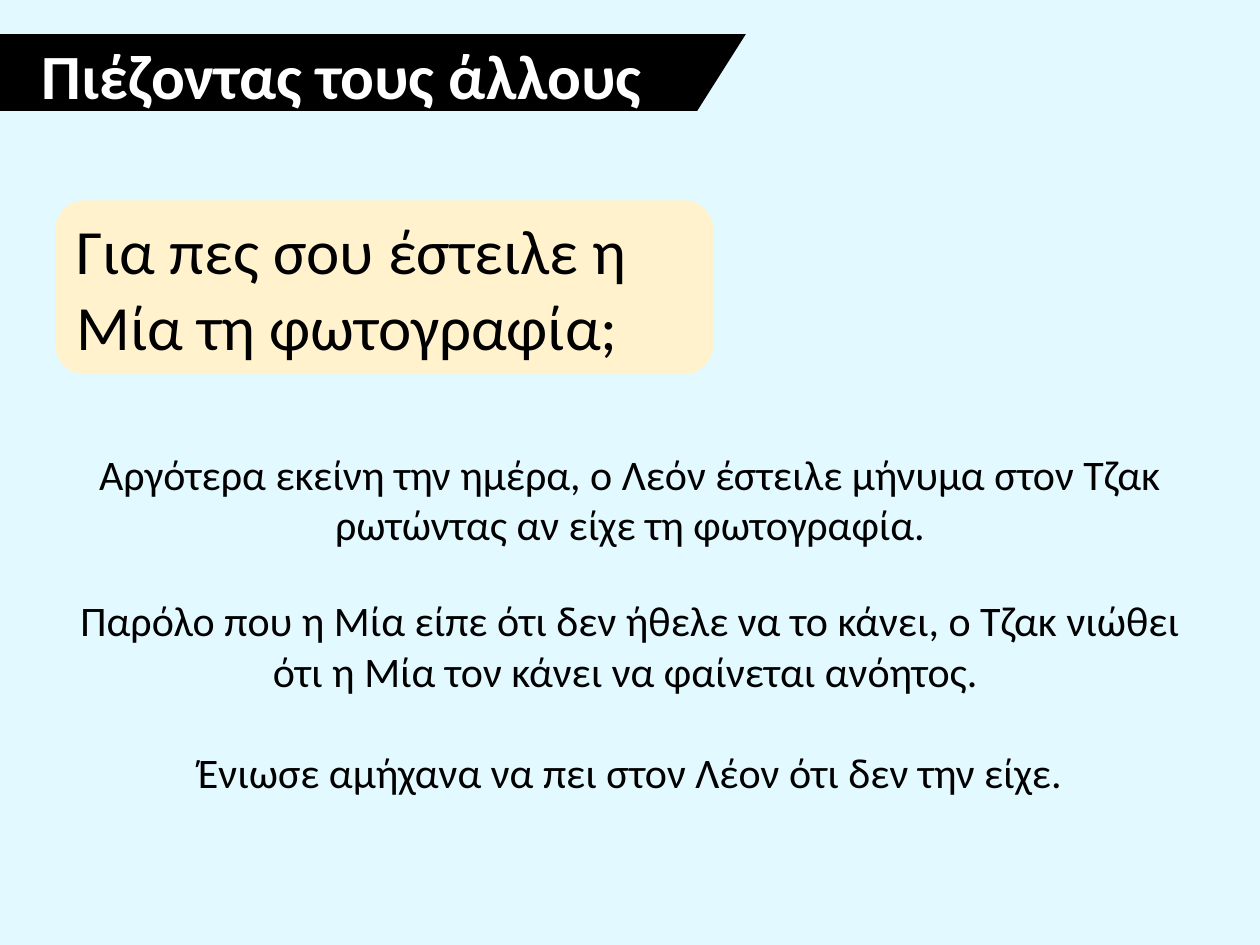
from dataclasses import dataclass

from pptx import Presentation
from pptx.dml.color import RGBColor
from pptx.enum.shapes import MSO_SHAPE as Preset
from pptx.enum.text import MSO_ANCHOR as Anchor, MSO_AUTO_SIZE as AutoSize, PP_ALIGN as Align
from pptx.slide import Slide
from pptx.util import Inches, Pt

COLORS = {"sky": "E2F9FF", "ink": "000000", "cream": "FFF2CC", "white": "FFFFFF"}


@dataclass
class StorySlide:
    """Holds the style and the slide being built."""

    slide: Slide
    font: str = "Calibri"

    def color(self, name):
        return RGBColor.from_string(COLORS[name])

    def background(self, color):
        fill = self.slide.background.fill
        fill.solid()
        fill.fore_color.rgb = self.color(color)

    def set_text(self, holder, lines, size, color="ink", align=Align.LEFT,
                 anchor=Anchor.TOP, bold=False, gap=0, spacing=None):
        frame = holder.text_frame
        frame.text = "\n".join(lines)
        frame.word_wrap = True
        frame.auto_size = AutoSize.NONE
        frame.vertical_anchor = anchor
        for index, paragraph in enumerate(frame.paragraphs):
            paragraph.alignment = align
            paragraph.space_before = Pt(gap if index else 0)
            if spacing:
                paragraph.line_spacing = spacing
            for run in paragraph.runs:
                run.font.name = self.font
                run.font.size = Pt(size)
                run.font.bold = bold
                run.font.color.rgb = self.color(color)

    def panel(self, preset, box, color):
        panel = self.slide.shapes.add_shape(preset, *map(Inches, box))
        panel.shadow.inherit = False
        panel.fill.solid()
        panel.fill.fore_color.rgb = self.color(color)
        panel.line.fill.background()
        return panel

    def question(self, text, box):
        bubble = self.panel(Preset.ROUNDED_RECTANGLE, box, "cream")
        self.set_text(bubble, [text], 36, anchor=Anchor.MIDDLE)

    def story(self, lines, box):
        story = self.slide.shapes.add_textbox(*map(Inches, box))
        self.set_text(story, lines, 24, align=Align.CENTER, gap=29)

    def title(self, text, box):
        title = self.slide.shapes.title
        title.left, title.top, title.width, title.height = map(Inches, box)
        self.set_text(title, [text], 36, "white", bold=True, spacing=1.07)
        title.element.getparent().append(title.element)


def main():
    deck = Presentation()
    deck.slide_width, deck.slide_height = Inches(10), Inches(7.5)
    page = StorySlide(deck.slides.add_slide(deck.slide_layouts[5]))
    page.background("sky")

    margin, story_width = 0.44, 9.12
    page.story(
        ["Αργότερα εκείνη την ημέρα, ο Λεόν έστειλε μήνυμα στον Τζακ "
         "ρωτώντας αν είχε τη φωτογραφία."],
        (margin, 3.51, story_width, 0.91))
    page.question("Για πες σου έστειλε η Μία τη φωτογραφία;", (margin, 1.59, 5.22, 1.38))
    page.story(
        ["Παρόλο που η Μία είπε ότι δεν ήθελε να το κάνει, ο Τζακ νιώθει "
         "ότι η Μία τον κάνει να φαίνεται ανόητος. ",
         "Ένιωσε αμήχανα να πει στον Λέον ότι δεν την είχε."],
        (margin, 4.67, story_width, 1.72))

    banner_top, banner_width, banner_height = 0.27, 5.48, 0.61
    page.panel(Preset.FLOWCHART_DATA, (3.99, banner_top, 1.93, banner_height), "ink")
    page.panel(Preset.RECTANGLE, (0, banner_top, banner_width, banner_height), "ink")
    page.title("Πιέζοντας τους άλλους", (0.23, 0.2, banner_width, 0.72))

    deck.save("out.pptx")


if __name__ == "__main__":
    main()
